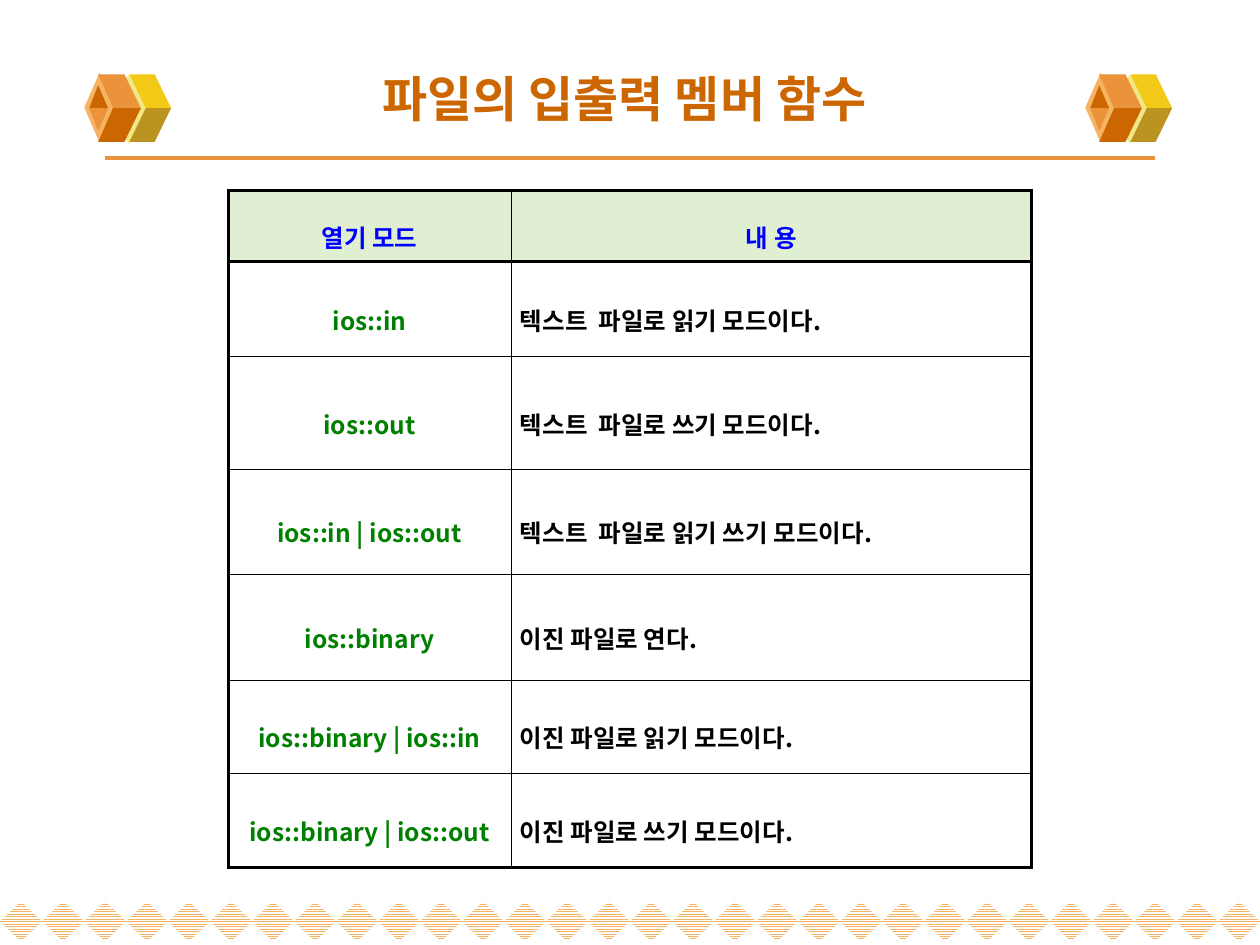
import pptx
import pptx.util
import pptx.dml.color
import pptx.enum.dml
import pptx.enum.shapes
import pptx.enum.text
import pptx.oxml
import pptx.oxml.ns
from dataclasses import dataclass

Cm = pptx.util.Cm
Pt = pptx.util.Pt
Shapes = pptx.enum.shapes.MSO_SHAPE
Align = pptx.enum.text.PP_ALIGN
Anchor = pptx.enum.text.MSO_ANCHOR


@dataclass(frozen=True)
class Theme:
    font: str = "Noto Sans CJK KR"
    title_size: int = 28
    table_size: int = 14
    title: str = "CC6600"
    header: str = "0000FF"
    header_fill: str = "E0EED1"
    mode: str = "008000"
    text: str = "000000"
    background: str = "FFFFFF"
    pale_orange: str = "F5B363"
    orange: str = "EB933B"
    dark_orange: str = "CC6600"
    cream: str = "F1E785"
    yellow: str = "F3C917"
    olive: str = "BB9321"
    rule_width: float = 2.25
    thin: float = 0.28
    frame: float = 1.7
    header_line: float = 1.98


THEME = Theme()

TITLE = "파일의 입출력 멤버 함수 "
ROWS = [
    ("열기 모드", "내 용"),
    ("ios::in", "텍스트  파일로 읽기 모드이다."),
    ("ios::out", "텍스트  파일로 쓰기 모드이다."),
    ("ios::in | ios::out", "텍스트  파일로 읽기 쓰기 모드이다."),
    ("ios::binary", "이진 파일로 연다."),
    ("ios::binary | ios::in", "이진 파일로 읽기 모드이다."),
    ("ios::binary | ios::out", "이진 파일로 쓰기 모드이다."),
]
COLUMN_WIDTHS = (5.7, 10.5)
ROW_HEIGHTS = (1.44, 1.91, 2.26, 2.13, 2.13, 1.87, 1.91)
TABLE_LEFT, TABLE_TOP = 4.6, 3.84

SLIDE_WIDTH, SLIDE_HEIGHT = 25.4, 19.05
DIAMOND_COUNT = 30
DIAMOND_TOP, DIAMOND_HEIGHT = 18.17, 0.81

BLOCK_LEFTS = (1.7, 21.88)
BLOCK_TOP = 1.47
BLOCK_MIDDLE = 0.71
BLOCK_LAYERS = [
    ((0.48, 0.03, 0.84, 1.4), THEME.cream,
     [([(1.24, 0.71), (1.75, 0.71), (1.42, 0.03), (0.91, 0.03)], THEME.yellow, THEME.olive)]),
    ((0, 0, 0.61, 1.4), THEME.pale_orange,
     [([(0.58, 0.71), (1.14, 0.71), (0.81, 0.03), (0.28, 0.03)], THEME.orange, THEME.dark_orange),
      ([(0.28, 0.25), (0.1, 0.71), (0.48, 0.71)], THEME.dark_orange, THEME.orange)]),
]


def rgb(color):
    return pptx.dml.color.RGBColor.from_string(color)


def paint(shape, color):
    shape.shadow.inherit = False
    shape.fill.solid()
    shape.fill.fore_color.rgb = rgb(color)
    shape.line.fill.background()


def add_run(paragraph, text, size, color):
    run = paragraph.add_run()
    run.text = text
    run.font.size = Pt(size)
    run.font.bold = True
    run.font.color.rgb = rgb(color)
    run.font.name = THEME.font
    east_asian = pptx.oxml.parse_xml(
        f'<a:ea {pptx.oxml.ns.nsdecls("a")} typeface="{THEME.font}"/>')
    run._r.get_or_add_rPr().append(east_asian)


def add_diamond_band(slide):
    pitch = SLIDE_WIDTH / DIAMOND_COUNT
    for index in range(DIAMOND_COUNT):
        diamond = slide.shapes.add_shape(
            Shapes.DIAMOND, Cm(index * pitch), Cm(DIAMOND_TOP), Cm(pitch), Cm(DIAMOND_HEIGHT))
        diamond.shadow.inherit = False
        diamond.fill.patterned()
        diamond.fill.pattern = pptx.enum.dml.MSO_PATTERN.NARROW_HORIZONTAL
        diamond.fill.fore_color.rgb = rgb(THEME.pale_orange)
        diamond.fill.back_color.rgb = rgb(THEME.background)
        diamond.line.fill.background()


def add_title_rule(slide):
    rule = slide.shapes.add_connector(
        pptx.enum.shapes.MSO_CONNECTOR.STRAIGHT, Cm(2.12), Cm(3.18), Cm(23.28), Cm(3.18))
    rule.line.color.rgb = rgb(THEME.orange)
    rule.line.width = Pt(THEME.rule_width)
    rule._element.spPr.append(
        pptx.oxml.parse_xml(f'<a:effectLst {pptx.oxml.ns.nsdecls("a")}/>'))


def add_facet(slide, left, points, color):
    corners = [(Cm(left + x), Cm(BLOCK_TOP + y)) for x, y in points]
    builder = slide.shapes.build_freeform(*corners[0])
    builder.add_line_segments(corners[1:], close=True)
    paint(builder.convert_to_shape(), color)


def add_block(slide, left):
    for (x, y, width, height), color, facets in BLOCK_LAYERS:
        diamond = slide.shapes.add_shape(
            Shapes.DIAMOND, Cm(left + x), Cm(BLOCK_TOP + y), Cm(width), Cm(height))
        paint(diamond, color)
        for points, upper_color, lower_color in facets:
            mirrored = [(px, 2 * BLOCK_MIDDLE - py) for px, py in points]
            add_facet(slide, left, points, upper_color)
            add_facet(slide, left, mirrored, lower_color)


def add_title(slide):
    box = slide.shapes.add_textbox(Cm(1.27), Cm(0.76), Cm(22.86), Cm(2.41))
    box.text_frame.word_wrap = True
    box.text_frame.vertical_anchor = Anchor.MIDDLE
    paragraph = box.text_frame.paragraphs[0]
    paragraph.alignment = Align.CENTER
    add_run(paragraph, TITLE, THEME.title_size, THEME.title)


def set_borders(cell, row, column):
    last_row, last_column = len(ROWS) - 1, len(COLUMN_WIDTHS) - 1
    horizontal = {0: THEME.frame, 1: THEME.header_line, last_row + 1: THEME.frame}
    vertical = {0: THEME.frame, last_column + 1: THEME.frame}
    widths = {
        "lnL": vertical.get(column, THEME.thin),
        "lnR": vertical.get(column + 1, THEME.thin),
        "lnT": horizontal.get(row, THEME.thin),
        "lnB": horizontal.get(row + 1, THEME.thin),
    }
    properties = cell._tc.get_or_add_tcPr()
    for side, width in widths.items():
        properties.append(pptx.oxml.parse_xml(
            f'<a:{side} {pptx.oxml.ns.nsdecls("a")} w="{int(Pt(width))}"><a:solidFill>'
            f'<a:srgbClr val="{THEME.text}"/></a:solidFill></a:{side}>'))


def fill_cell(cell, text, row, column):
    set_borders(cell, row, column)
    if row == 0:
        cell.fill.solid()
        cell.fill.fore_color.rgb = rgb(THEME.header_fill)
        color = THEME.header
    else:
        cell.fill.background()
        color = (THEME.mode, THEME.text)[column]
    cell.vertical_anchor = Anchor.MIDDLE
    cell.margin_left = cell.margin_right = Cm(0.18)
    cell.margin_top = cell.margin_bottom = Cm(0.05)
    paragraph = cell.text_frame.paragraphs[0]
    paragraph.alignment = Align.JUSTIFY if row and column else Align.CENTER
    paragraph.line_spacing = 1.6
    add_run(paragraph, text, THEME.table_size, color)


def add_mode_table(slide):
    table = slide.shapes.add_table(
        len(ROWS), len(COLUMN_WIDTHS), Cm(TABLE_LEFT), Cm(TABLE_TOP),
        Cm(sum(COLUMN_WIDTHS)), Cm(sum(ROW_HEIGHTS))).table
    table.first_row = table.horz_banding = False
    for column, width in enumerate(COLUMN_WIDTHS):
        table.columns[column].width = Cm(width)
    for row, (texts, height) in enumerate(zip(ROWS, ROW_HEIGHTS)):
        table.rows[row].height = Cm(height)
        for column, text in enumerate(texts):
            fill_cell(table.cell(row, column), text, row, column)


def main():
    presentation = pptx.Presentation()
    presentation.slide_width = Cm(SLIDE_WIDTH)
    presentation.slide_height = Cm(SLIDE_HEIGHT)
    slide = presentation.slides.add_slide(presentation.slide_layouts[6])
    add_diamond_band(slide)
    add_title_rule(slide)
    for left in BLOCK_LEFTS:
        add_block(slide, left)
    add_title(slide)
    add_mode_table(slide)
    presentation.save("out.pptx")


if __name__ == "__main__":
    main()
